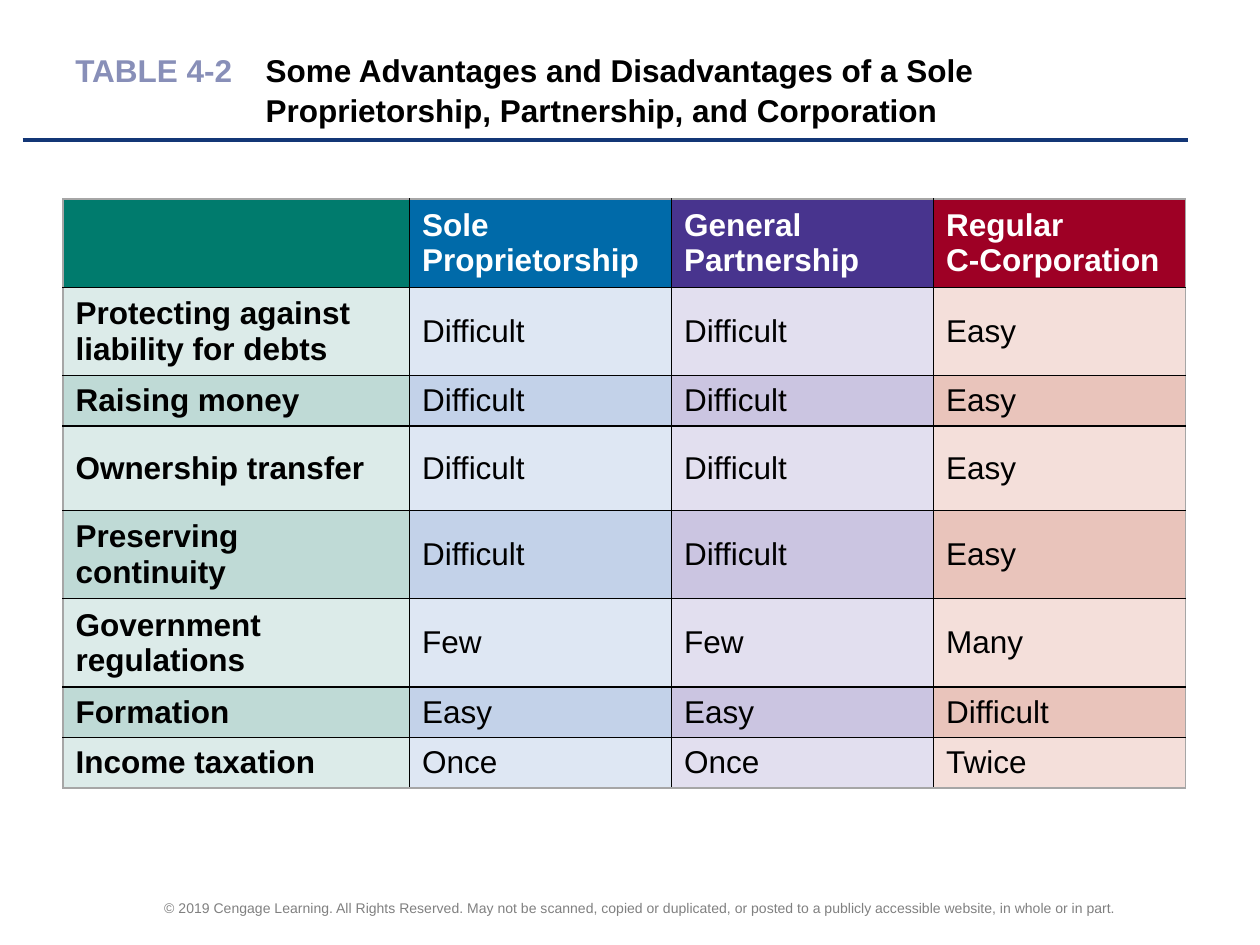
from lxml import etree
from pptx import Presentation
from pptx import util as u
from pptx.dml.color import RGBColor
from pptx.enum import shapes, text
from pptx.oxml.ns import qn

COLORS = {
    "ink": "000000", "white": "FFFFFF", "label": "888FB8",
    "rule": "133676", "footer": "808080", "outer": "A6A6A6",
}
HEADER_FILLS = ["007B6D", "006AA9", "48348E", "9E0025"]
BAND_FILLS = [
    ["DCEBE9", "DEE7F3", "E2DFEF", "F4DFDA"],
    ["BFDAD6", "C3D2E9", "CBC5E1", "E9C4BB"],
]
COLUMN_WIDTHS = [2.75, 2.08, 2.08, 2]
TALL, SHORT = 0.67, 0.38
COMPARISON = [
    (TALL, ["", "Sole Proprietorship", "General Partnership", "Regular\vC-Corporation"]),
    (TALL, ["Protecting against liability for debts", "Difficult", "Difficult", "Easy"]),
    (SHORT, ["Raising money", "Difficult", "Difficult", "Easy"]),
    (TALL, ["Ownership transfer", "Difficult", "Difficult", "Easy"]),
    (TALL, ["Preserving continuity", "Difficult", "Difficult", "Easy"]),
    (TALL, ["Government regulations", "Few", "Few", "Many"]),
    (SHORT, ["Formation", "Easy", "Easy", "Difficult"]),
    (SHORT, ["Income taxation", "Once", "Once", "Twice"]),
]
COPYRIGHT = (
    "© 2019 Cengage Learning. All Rights Reserved. May not be scanned, copied or "
    "duplicated, or posted to a publicly accessible website, in whole or in part."
)


class SlideBuilder:
    """Holds the type style and the slide being filled."""

    font = "Arial"
    size = 18

    def __init__(self, slide):
        self.slide = slide

    def style(self, font, color, bold=False, size=None):
        font.name = self.font
        font.size = u.Pt(size or self.size)
        font.bold = bold
        font.color.rgb = RGBColor.from_string(COLORS[color])

    def textbox(self, left, top, width, height):
        """Adds a wrapping, vertically centred box and returns its first paragraph."""
        box = self.slide.shapes.add_textbox(*map(u.Inches, (left, top, width, height)))
        frame = box.text_frame
        frame.word_wrap = True
        frame.vertical_anchor = text.MSO_ANCHOR.MIDDLE
        return frame.paragraphs[0]

    def title(self, label, caption, hang):
        """Sets the label, then the caption on a hanging indent."""
        heading = self.textbox(0.5, 0.33, 9, 0.75)
        properties = heading._p.get_or_add_pPr()
        indent = u.Inches(hang)
        properties.set("marL", str(indent))
        properties.set("indent", str(-indent))
        tabs = etree.SubElement(properties, qn("a:tabLst"))
        etree.SubElement(tabs, qn("a:tab"), pos=str(indent), algn="l")
        heading.line_spacing = 1.05
        for wording, color in ((label, "label"), ("\t" + caption, "ink")):
            run = heading.add_run()
            run.text = wording
            self.style(run.font, color, bold=True)

    def footer(self, wording):
        notice = self.textbox(0.75, 7.08, 8.67, 0.25)
        notice.text = wording
        notice.alignment = text.PP_ALIGN.CENTER
        self.style(notice.runs[0].font, "footer", size=8)

    def rule(self, left, right, y):
        rule = self.slide.shapes.add_connector(
            shapes.MSO_CONNECTOR.STRAIGHT,
            u.Inches(left), u.Inches(y), u.Inches(right), u.Inches(y))
        rule.line.color.rgb = RGBColor.from_string(COLORS["rule"])
        rule.line.width = u.Pt(2.25)
        etree.SubElement(rule._element.spPr, qn("a:effectLst"))

    def borders(self, cell, outer_sides):
        """Draws black inner borders and grey ones on the outer sides."""
        properties = cell._tc.get_or_add_tcPr()
        for position, side in enumerate("LRTB"):
            line = etree.Element(qn("a:ln" + side), w=str(u.Pt(1)))
            fill = etree.SubElement(line, qn("a:solidFill"))
            color = COLORS["outer" if side in outer_sides else "ink"]
            etree.SubElement(fill, qn("a:srgbClr"), val=color)
            properties.insert(position, line)

    def cell(self, cell, wording, fill, color, bold):
        cell.fill.solid()
        cell.fill.fore_color.rgb = RGBColor.from_string(fill)
        cell.vertical_anchor = text.MSO_ANCHOR.MIDDLE
        cell.text_frame.text = wording
        paragraph = cell.text_frame.paragraphs[0]
        self.style(paragraph.font, color, bold)
        for run in paragraph.runs:
            self.style(run.font, color, bold)

    def table(self, left, top, widths, rows):
        height = sum(row_height for row_height, _ in rows)
        table = self.slide.shapes.add_table(
            len(rows), len(widths), u.Inches(left), u.Inches(top),
            u.Inches(sum(widths)), u.Inches(height)).table
        for column, width in zip(table.columns, widths):
            column.width = u.Inches(width)
        last_row, last_column = len(rows) - 1, len(widths) - 1
        for r, (row_height, wordings) in enumerate(rows):
            table.rows[r].height = u.Inches(row_height)
            fills = BAND_FILLS[(r - 1) % 2] if r else HEADER_FILLS
            for c, (wording, fill) in enumerate(zip(wordings, fills)):
                cell = table.cell(r, c)
                self.cell(cell, wording, fill, "ink" if r else "white", r == 0 or c == 0)
                if c == 0:
                    cell.margin_right = u.Inches(0.15)
                edges = {"L": c == 0, "R": c == last_column, "T": r == 0, "B": r == last_row}
                self.borders(cell, [side for side, outer in edges.items() if outer])


def main():
    deck = Presentation()
    deck.slide_width, deck.slide_height = u.Inches(10), u.Inches(7.5)
    builder = SlideBuilder(deck.slides.add_slide(deck.slide_layouts[6]))
    builder.footer(COPYRIGHT)
    builder.rule(0.18, 9.43, 1.11)
    builder.title(
        "TABLE 4-2",
        "Some Advantages and Disadvantages of a Sole Proprietorship, "
        "Partnership, and Corporation",
        hang=1.51)
    builder.table(0.5, 1.58, COLUMN_WIDTHS, COMPARISON)
    deck.save("out.pptx")


if __name__ == "__main__":
    main()
